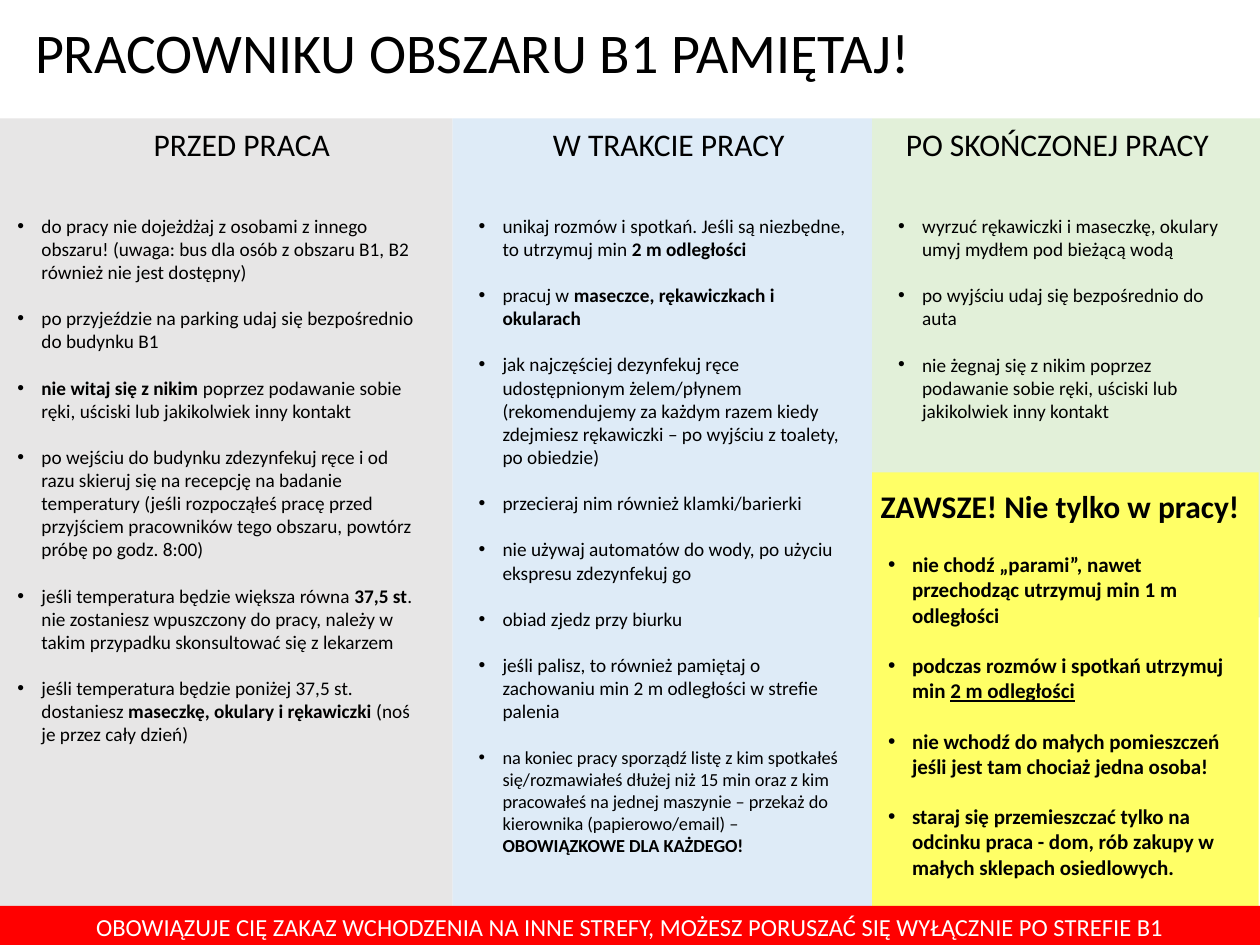
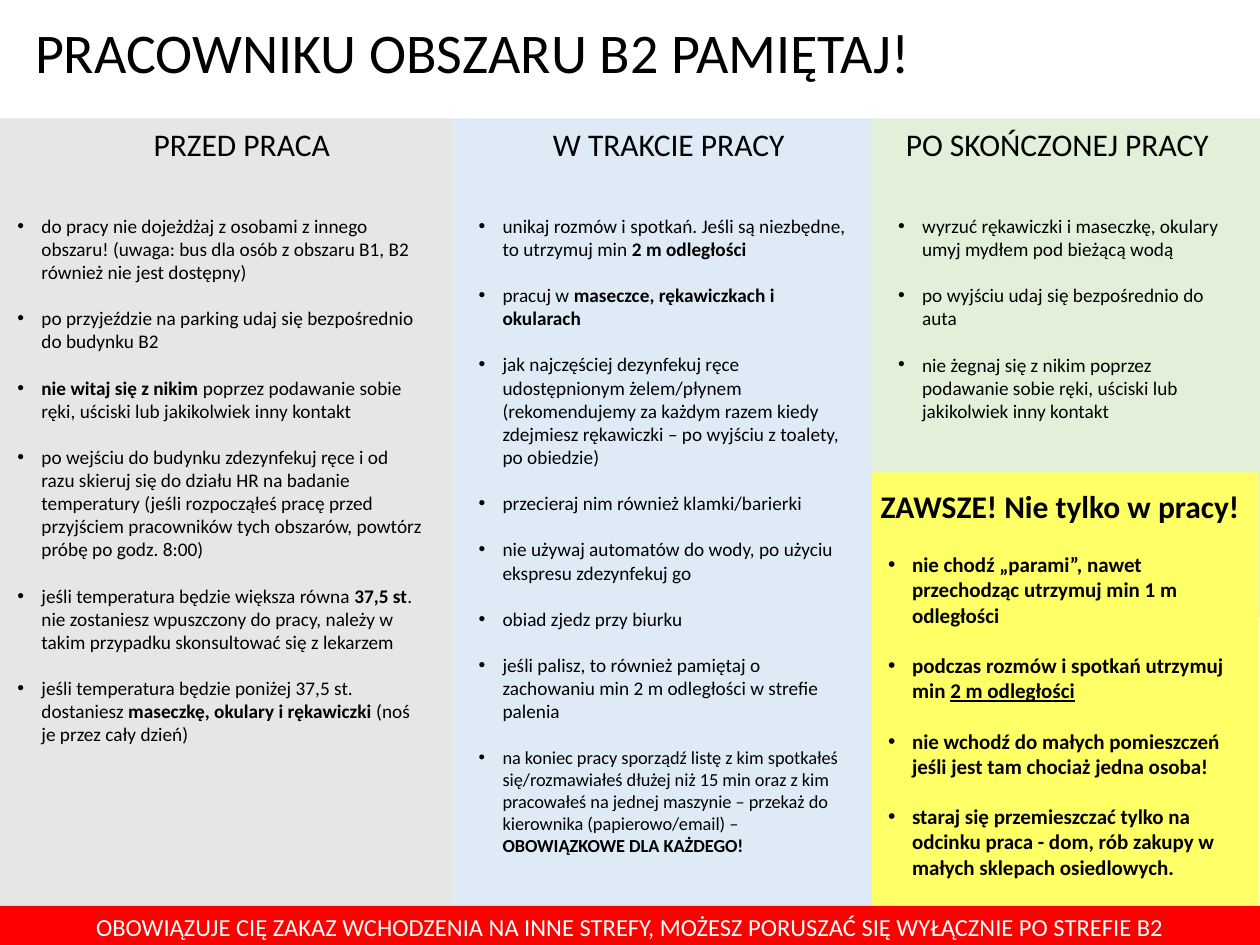
from dataclasses import dataclass

from lxml import etree
from pptx import Presentation
from pptx.dml.color import RGBColor
from pptx.enum.shapes import MSO_SHAPE
from pptx.enum.text import MSO_ANCHOR, PP_ALIGN
from pptx.oxml.ns import qn
from pptx.util import Inches, Pt

RECT = MSO_SHAPE.RECTANGLE
TOP = MSO_ANCHOR.TOP
LEFT, CENTER = PP_ALIGN.LEFT, PP_ALIGN.CENTER

# Content: {area}, {place} and {group} vary by slide; *...* marks emphasis
AREAS = [
    {"area": "B1", "place": "na recepcję", "group": "tego obszaru"},
    {"area": "B2", "place": "do działu HR", "group": "tych obszarów"},
]
TITLE = "PRACOWNIKU OBSZARU {area} PAMIĘTAJ!"
FOOTER = ("OBOWIĄZUJE CIĘ ZAKAZ WCHODZENIA NA INNE STREFY, "
          "MOŻESZ PORUSZAĆ SIĘ WYŁĄCZNIE PO STREFIE {area}")
BEFORE = [
    "do pracy nie dojeżdżaj z osobami z innego obszaru! "
    "(uwaga: bus dla osób z obszaru B1, B2 również nie jest dostępny)",
    "po przyjeździe na parking udaj się bezpośrednio do budynku {area}",
    "*nie witaj się z nikim *poprzez podawanie sobie ręki, uściski "
    "lub jakikolwiek inny kontakt",
    "po wejściu do budynku zdezynfekuj ręce i od razu skieruj się {place} "
    "na badanie temperatury (jeśli rozpocząłeś pracę przed przyjściem "
    "pracowników {group}, powtórz próbę po godz. 8:00)",
    "jeśli temperatura będzie większa równa *37,5 st*. nie zostaniesz "
    "wpuszczony do pracy, należy w takim przypadku skonsultować się z lekarzem",
    "jeśli temperatura będzie poniżej 37,5 st. dostaniesz "
    "*maseczkę, okulary i rękawiczki *(noś je przez cały dzień)",
]
DURING = [
    "unikaj rozmów i spotkań. Jeśli są niezbędne, to utrzymuj min *2 m odległości*",
    "pracuj w *maseczce, rękawiczkach i okularach*",
    "jak najczęściej dezynfekuj ręce udostępnionym żelem/płynem (rekomendujemy "
    "za każdym razem kiedy zdejmiesz rękawiczki – po wyjściu z toalety, po obiedzie)",
    "przecieraj nim również klamki/barierki",
    "nie używaj automatów do wody, po użyciu ekspresu zdezynfekuj go",
    "obiad zjedz przy biurku",
    "jeśli palisz, to również pamiętaj o zachowaniu min 2 m odległości "
    "w strefie palenia",
]
REPORT = [
    "na koniec pracy sporządź listę z kim spotkałeś się/rozmawiałeś dłużej niż "
    "15 min oraz z kim pracowałeś na jednej maszynie – przekaż do kierownika "
    "(papierowo/email) – *OBOWIĄZKOWE DLA KAŻDEGO!*",
]
AFTER = [
    "wyrzuć rękawiczki i maseczkę, okulary umyj mydłem pod bieżącą wodą",
    "po wyjściu udaj się bezpośrednio do auta",
    "nie żegnaj się z nikim poprzez podawanie sobie ręki, uściski "
    "lub jakikolwiek inny kontakt",
]
ALWAYS = [
    "nie chodź „parami”, nawet przechodząc utrzymuj min 1 m odległości",
    "podczas rozmów i spotkań utrzymuj min *2 m odległości*",
    "nie wchodź do małych pomieszczeń jeśli jest tam chociaż jedna osoba!",
    "staraj się przemieszczać tylko na odcinku praca - dom, rób zakupy "
    "w małych sklepach osiedlowych.",
]


@dataclass(frozen=True)
class Theme:
    font: str = "Calibri"
    ink: str = "000000"
    white: str = "FFFFFF"
    grey: str = "E7E6E6"
    blue: str = "DEEBF7"
    green: str = "E2F0D9"
    yellow: str = "FFFF66"
    red: str = "FF0000"
    title: float = 32
    heading: float = 18
    footer: float = 14
    strong: float = 12
    body: float = 11
    small: float = 10.5
    line: float = 1.2
    indent: float = 0.19


T = Theme()

# Grid, in inches
W, H = 10, 7.5
COL1, COL2, COL3 = 0, 3.59, 6.92
BAND_TOP, ALWAYS_TOP, FOOT_TOP = 0.94, 3.75, 7.19
LIST_TOP = 1.65
HEAD_H = 0.4

PANELS = [  # left, top, width, height, colour
    (COL3, BAND_TOP, W - COL3, 3.96, T.green),
    (COL3, ALWAYS_TOP, W - COL3 - 0.01, FOOT_TOP - ALWAYS_TOP, T.yellow),
    (COL2, BAND_TOP, COL3 - COL2, FOOT_TOP - BAND_TOP, T.blue),
    (COL1, BAND_TOP, COL2 - COL1, FOOT_TOP - BAND_TOP, T.grey),
]
HEADINGS = [  # text, left, top, width, wrap, bold
    ("PRZED PRACA", 1.12, BAND_TOP, 1.61, False, False),
    ("W TRAKCIE PRACY", 4.29, BAND_TOP, 2.06, False, False),
    ("PO SKOŃCZONEJ PRACY", 7.09, BAND_TOP, 2.91, True, False),
    ("ZAWSZE! Nie tylko w pracy!", 6.89, 3.82, 3.11, True, True),
]
LISTS = [  # left, top, width, height, bold, groups of (items, size)
    (6.95, 4.33, 2.91, 2.75, True, [(ALWAYS, T.strong)]),
    (0.04, LIST_TOP, 3.41, 4.51, False, [(BEFORE, T.body)]),
    (3.7, LIST_TOP, 3.19, 5.4, False, [(DURING, T.body), (REPORT, T.small)]),
    (7.03, LIST_TOP, 2.82, 1.95, False, [(AFTER, T.body)]),
]


def add_rect(slide, left, top, width, height, color):
    sp = slide.shapes.add_shape(RECT, Inches(left), Inches(top),
                                Inches(width), Inches(height))
    sp.shadow.inherit = False
    sp.fill.solid()
    sp.fill.fore_color.rgb = RGBColor.from_string(color)
    sp.line.fill.background()
    return sp


def add_box(slide, left, top, width, height, wrap=True):
    tf = slide.shapes.add_textbox(Inches(left), Inches(top),
                                  Inches(width), Inches(height)).text_frame
    tf.word_wrap = wrap
    return tf


def write(p, text, size, color=T.ink, bold=False, align=LEFT):
    """Fill a paragraph; emphasis is bold, or underlined where all is bold."""
    p.alignment = align
    for i, part in enumerate(text.split("*")):
        if part:
            r = p.add_run()
            r.text = part
            f = r.font
            f.name, f.size = T.font, Pt(size)
            f.color.rgb = RGBColor.from_string(color)
            f.bold = bold or i % 2 == 1
            f.underline = bold and i % 2 == 1


def add_bullet(p):
    pPr = p._p.get_or_add_pPr()
    pPr.set("marL", str(Inches(T.indent)))
    pPr.set("indent", str(-Inches(T.indent)))
    etree.SubElement(pPr, qn("a:buFont")).set("typeface", "Arial")
    etree.SubElement(pPr, qn("a:buChar")).set("char", "•")


def add_list(tf, groups, bold, area):
    rows = [(item, size) for items, size in groups for item in items]
    for i, (item, size) in enumerate(rows):
        p = tf.paragraphs[0] if i == 0 else tf.add_paragraph()
        write(p, item.format(**area), size, bold=bold)
        if i < len(rows) - 1:
            p.space_after = Pt(round(size * T.line, 1))
        add_bullet(p)


def add_footer(slide, text):
    tf = add_rect(slide, 0, FOOT_TOP, W, H - FOOT_TOP, T.red).text_frame
    tf.word_wrap = True
    tf.vertical_anchor = TOP
    tf.margin_bottom = 0
    write(tf.paragraphs[0], text, T.footer, T.white, align=CENTER)


def build_slide(prs, area):
    slide = prs.slides.add_slide(prs.slide_layouts[6])
    for panel in PANELS:
        add_rect(slide, *panel)
    for text, left, top, width, wrap, bold in HEADINGS:
        tf = add_box(slide, left, top, width, HEAD_H, wrap)
        write(tf.paragraphs[0], text, T.heading, bold=bold)
    tf = add_box(slide, 0.18, 0.09, 9.29, 0.64)
    write(tf.paragraphs[0], TITLE.format(**area), T.title)
    add_footer(slide, FOOTER.format(**area))
    for left, top, width, height, bold, groups in LISTS:
        add_list(add_box(slide, left, top, width, height), groups, bold, area)


def main():
    prs = Presentation()
    prs.slide_width, prs.slide_height = Inches(W), Inches(H)
    for area in AREAS:
        build_slide(prs, area)
    prs.save("out.pptx")


if __name__ == "__main__":
    main()
